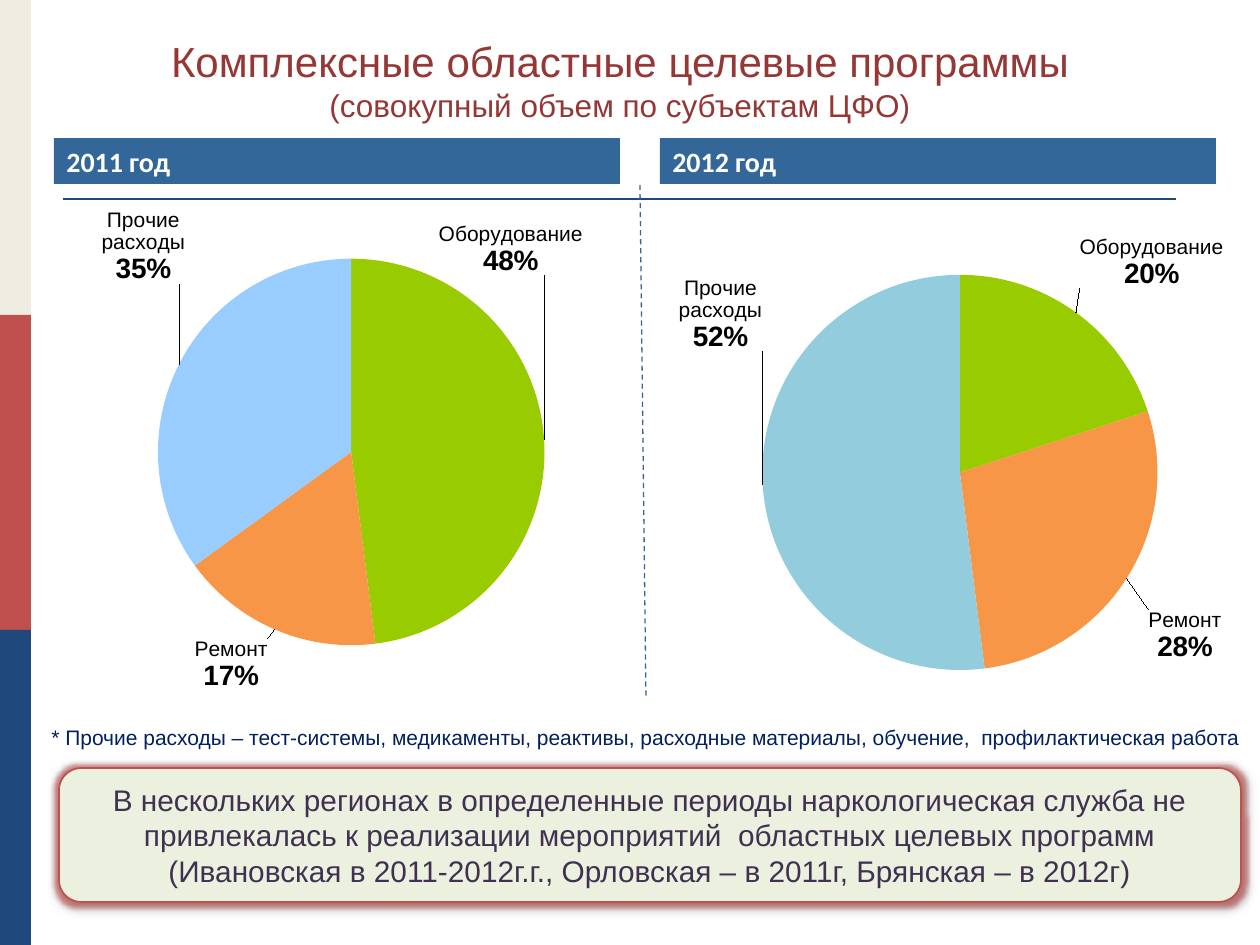
from dataclasses import dataclass

from lxml.etree import SubElement
from pptx import Presentation
from pptx.chart.data import CategoryChartData
from pptx.dml.color import RGBColor
from pptx.enum.chart import XL_CHART_TYPE, XL_LABEL_POSITION
from pptx.enum.dml import MSO_LINE
from pptx.enum.shapes import MSO_CONNECTOR, MSO_SHAPE
from pptx.enum.text import MSO_ANCHOR, PP_ALIGN
from pptx.oxml import parse_xml
from pptx.oxml.ns import nsdecls, qn
from pptx.util import Emu, Pt

PX_PER_INCH = 126


def px(length):
    return Emu(round(length * 914400 / PX_PER_INCH))


def rgb(color):
    return RGBColor.from_string(color)


@dataclass(frozen=True)
class Theme:
    cream: str = "EEECE1"
    red: str = "C0504D"
    navy: str = "1F497D"
    header: str = "336699"
    white: str = "FFFFFF"
    black: str = "000000"
    title: str = "953735"
    footnote: str = "002060"
    note_fill: str = "EBF1DE"
    note_text: str = "403152"
    green: str = "99CC00"
    orange: str = "F79646"
    sky: str = "99CCFF"
    teal: str = "93CDDD"
    body_font: str = "Arial"
    header_font: str = "Calibri"
    title_size: int = 24
    subtitle_size: int = 18
    note_size: int = 17
    header_size: int = 16
    share_size: int = 16
    small_size: int = 12


class SlideBuilder:
    def __init__(self, slide, theme):
        self.shapes = slide.shapes
        self.theme = theme

    def style(self, paragraph, size, color, font=None, bold=False):
        for run in paragraph.runs:
            run.font.name = font or self.theme.body_font
            run.font.size = Pt(size)
            run.font.bold = bold
            run.font.color.rgb = rgb(color)

    def box(self, left, top, width, height, fill, kind=MSO_SHAPE.RECTANGLE):
        box = self.shapes.add_shape(kind, px(left), px(top), px(width), px(height))
        box.shadow.inherit = False
        box.fill.solid()
        box.fill.fore_color.rgb = rgb(fill)
        box.line.fill.background()
        return box

    def line(self, start, end, color, width, dash=None):
        line = self.shapes.add_connector(
            MSO_CONNECTOR.STRAIGHT, *map(px, start), *map(px, end))
        line.line.color.rgb = rgb(color)
        line.line.width = Pt(width)
        if dash:
            line.line.dash_style = dash
        SubElement(line._element.spPr, qn("a:effectLst"))

    def header(self, left, width, text):
        bar = self.box(left, 138, width, 46, self.theme.header)
        frame = bar.text_frame
        frame.text = text
        frame.vertical_anchor = MSO_ANCHOR.MIDDLE
        frame.paragraphs[0].alignment = PP_ALIGN.LEFT
        self.style(frame.paragraphs[0], self.theme.header_size,
                   self.theme.white, self.theme.header_font, True)

    def text(self, left, top, width, height, lines, color, align):
        frame = self.shapes.add_textbox(
            px(left), px(top), px(width), px(height)).text_frame
        frame.word_wrap = True
        frame.text = "\n".join(text for text, _ in lines)
        for paragraph, (_, size) in zip(frame.paragraphs, lines):
            paragraph.alignment = align
            self.style(paragraph, size, color)

    def note(self, left, top, width, height, text):
        theme = self.theme
        note = self.box(left, top, width, height, theme.note_fill,
                        MSO_SHAPE.ROUNDED_RECTANGLE)
        note.line.color.rgb = rgb(theme.red)
        note.line.width = Pt(1)
        # Red glow over a soft dark shadow
        effects = note._element.spPr.find(qn("a:effectLst"))
        for tag, radius, color, alpha in (("a:glow", "rad", theme.red, 60),
                                          ("a:outerShdw", "blurRad", theme.black, 40)):
            effect = SubElement(effects, qn(tag), {radius: str(Pt(5))})
            tint = SubElement(effect, qn("a:srgbClr"), val=color)
            SubElement(tint, qn("a:alpha"), val=str(alpha * 1000))
        frame = note.text_frame
        frame.word_wrap = True
        frame.text = text
        frame.vertical_anchor = MSO_ANCHOR.MIDDLE
        frame.paragraphs[0].alignment = PP_ALIGN.CENTER
        self.style(frame.paragraphs[0], theme.note_size, theme.note_text)

    @staticmethod
    def layout(x, y, width=None, height=None):
        """Manual chart layout: a label offset, or an inner plot frame."""
        parts = [("x", x), ("y", y)]
        if width:
            parts = [("layoutTarget", "inner"), ("xMode", "edge"), ("yMode", "edge"),
                     *parts, ("w", width), ("h", height)]
        body = "".join(f'<c:{tag} val="{value}"/>' for tag, value in parts)
        return parse_xml(f'<c:layout {nsdecls("c")}><c:manualLayout>{body}'
                         "</c:manualLayout></c:layout>")

    def pie(self, frame, plot, slices):
        """Each slice is name, share, colour and label shift in px."""
        theme = self.theme
        data = CategoryChartData()
        data.categories = [name for name, *_ in slices]
        data.add_series("Series 1", [share for _, share, *_ in slices])
        chart = self.shapes.add_chart(XL_CHART_TYPE.PIE, *map(px, frame), data).chart
        chart.has_legend = False
        chart.has_title = False
        chart.font.name = theme.body_font
        chart.font.size = Pt(theme.small_size)
        chart.font.color.rgb = rgb(theme.black)
        pie = chart.plots[0]
        pie.vary_by_categories = True
        area = chart._chartSpace.chart.plotArea
        for old in area.findall(qn("c:layout")):
            area.remove(old)
        area.insert(0, self.layout(*plot))

        for index, (name, share, color, (dx, dy)) in enumerate(slices):
            point = pie.series[0].points[index]
            point.format.fill.solid()
            point.format.fill.fore_color.rgb = rgb(color)
            label = point.data_label
            label.text_frame.text = f"{name}\n{share}%"
            name_line, share_line = label.text_frame.paragraphs
            self.style(name_line, theme.small_size, theme.black)
            self.style(share_line, theme.share_size, theme.black, bold=True)
            label.position = XL_LABEL_POSITION.OUTSIDE_END
            element = label._dLbl
            for old in element.findall(qn("c:layout")):
                element.remove(old)
            shift = self.layout(round(dx / frame[2], 3), round(dy / frame[3], 3))
            element.insert(1, shift)


def main():
    theme = Theme()
    deck = Presentation()
    deck.slide_width, deck.slide_height = px(1260), px(945)
    page = SlideBuilder(deck.slides.add_slide(deck.slide_layouts[6]), theme)

    # Side stripe and rule
    for row, color in enumerate((theme.cream, theme.red, theme.navy)):
        page.box(0, row * 315, 31, 315, color)
    page.line((63, 199), (1176, 199), theme.navy, 1.5)

    # Year headers and divider
    page.header(54, 566, "2011 год")
    page.header(660, 556, "2012 год")
    page.line((640, 185), (646, 699), theme.header, 0.75, MSO_LINE.DASH)

    # Spending shares
    equipment, repair, other = "Оборудование", "Ремонт", "Прочие расходы"
    page.pie((-59, 157, 789, 553), (0.275, 0.184, 0.49, 0.699), [
        (equipment, 48, theme.green, (-113, -190)),
        (repair, 17, theme.orange, (-4, 2)),
        (other, 35, theme.sky, (13, -77))])
    page.pie((610, 207, 769, 590), (0.191, 0.115, 0.528, 0.67), [
        (equipment, 20, theme.green, (-1, -18)),
        (repair, 28, theme.orange, (15, 27)),
        (other, 52, theme.teal, (7, -171))])

    # Title
    page.text(108, 29, 1024, 102, [
        ("Комплексные областные целевые программы", theme.title_size),
        ("(совокупный объем по субъектам ЦФО)", theme.subtitle_size),
    ], theme.title, PP_ALIGN.CENTER)

    # Conclusion and footnote
    page.note(59, 768, 1182, 134,
              "В нескольких регионах в определенные периоды наркологическая служба не "
              "привлекалась к реализации мероприятий  областных целевых программ "
              "(Ивановская в 2011-2012г.г., Орловская – в 2011г, Брянская – в 2012г)")
    page.text(39, 718, 1221, 38, [
        ("* Прочие расходы – тест-системы, медикаменты, реактивы, расходные "
         "материалы, обучение,  профилактическая работа", theme.small_size),
    ], theme.footnote, PP_ALIGN.LEFT)

    deck.save("out.pptx")


if __name__ == "__main__":
    main()
